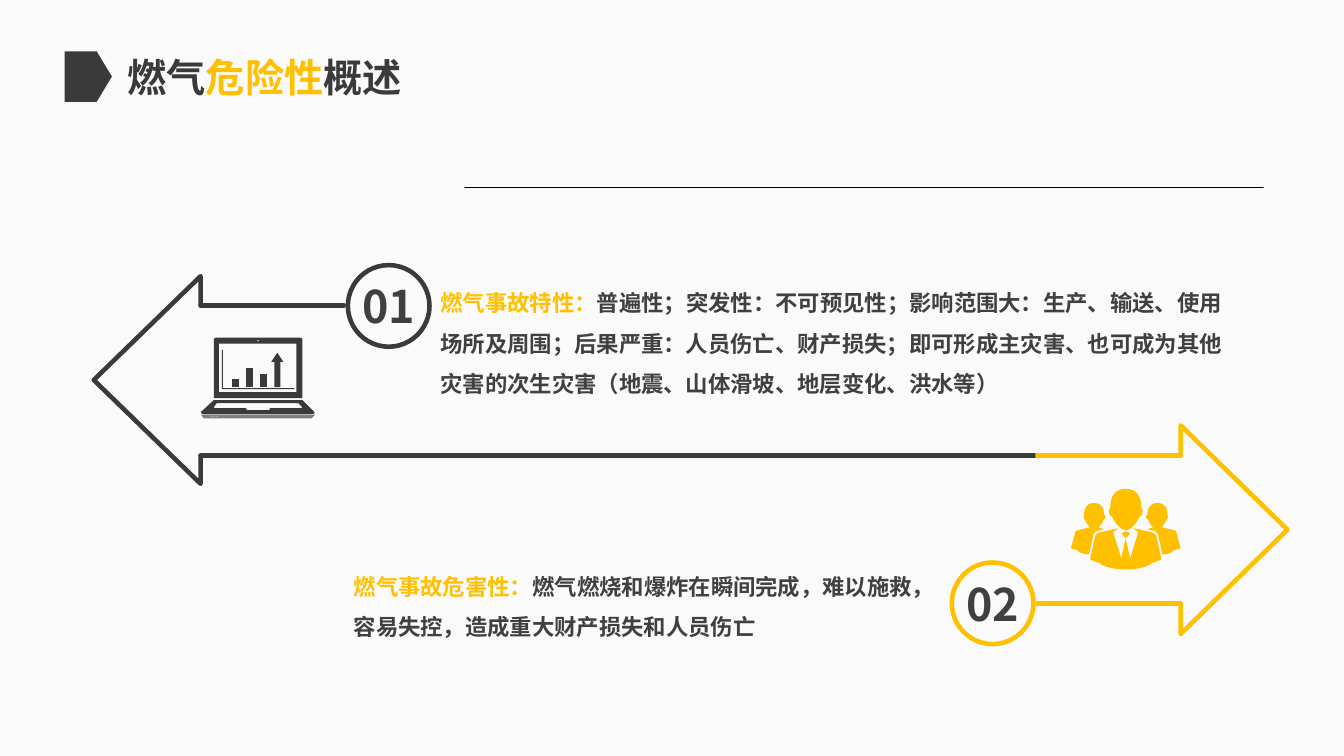
from dataclasses import dataclass

from lxml import etree
from pptx import Presentation
from pptx import util as u
from pptx.dml.color import RGBColor
from pptx.enum import shapes, text
from pptx.oxml.ns import qn

# Grid: square cells of a tenth of an inch
COLS, ROWS = 133.3, 75
CELL = u.Inches(0.1)
FONT = "Noto Sans CJK SC"
DARK, GREY, AMBER, GOLD = "3A3A3A", "404040", "FFC000", "FFC001"
CENTER = text.PP_ALIGN.CENTER
STROKE = 3.25
AXIS = 111.66  # middle column of the people icon


@dataclass
class Arrow:
    base: float
    tip: float
    top: float
    bottom: float
    upper: float
    lower: float
    color: str
    upper_end: float
    lower_end: float


@dataclass
class Badge:
    label: str
    col: float
    row: float
    color: str


@dataclass
class Part:
    contours: list
    alpha: int = 100


ARROWS = [
    Arrow(117.1, 127.7, 42.2, 62.9, 45.2, 59.9, AMBER, 102.9, 102.9),
    Arrow(19.9, 9.3, 27.4, 48, 30.3, 45.2, DARK, 34.1, 34.1),
]
BADGES = [Badge("01", 34.5, 26.3, DARK), Badge("02", 94.4, 55.8, AMBER)]


def cells(n: float) -> int:
    return round(n * CELL)


def rgb(color: str) -> RGBColor:
    return RGBColor.from_string(color)


def box(left: float, top: float, width: float, height: float) -> list:
    return [(left, top), (left + width, top),
            (left + width, top + height), (left, top + height)]


def flatten(outline: list, steps: int = 8) -> list:
    """Turn points and cubic curves (six numbers) into plain points."""
    points = []
    for item in outline:
        if len(item) == 2:
            points.append(item)
            continue
        x0, y0 = points[-1]
        x1, y1, x2, y2, x3, y3 = item
        for i in range(1, steps + 1):
            t = i / steps
            a, b, c, d = (1 - t) ** 3, 3 * t * (1 - t) ** 2, 3 * t * t * (1 - t), t ** 3
            points.append((a * x0 + b * x1 + c * x2 + d * x3,
                           a * y0 + b * y1 + c * y2 + d * y3))
    return points


def mirror(outline: list) -> list:
    return [(2 * AXIS - x, y) for x, y in reversed(flatten(outline))]


def symmetric(half: list) -> list:
    return flatten(half) + mirror(half)


def style_line(sp, color: str, width: float) -> None:
    sp.line.color.rgb = rgb(color)
    sp.line.width = u.Pt(width)
    ln = sp.line._get_or_add_ln()
    ln.set("cap", "rnd")
    etree.SubElement(ln, qn("a:round"))


def add_line(parent, x1: float, y1: float, x2: float, y2: float,
             color: str, width: float = STROKE) -> None:
    sp = parent.add_connector(shapes.MSO_CONNECTOR.STRAIGHT, *map(cells, (x1, y1, x2, y2)))
    style_line(sp, color, width)
    etree.SubElement(sp._element.spPr, qn("a:effectLst"))


def add_outline(parent, contours: list, closed: bool = True):
    builder = None
    for contour in contours:
        points = [(cells(x), cells(y)) for x, y in flatten(contour)]
        if builder is None:
            builder = parent.build_freeform(*points[0], scale=1.0)
        else:
            builder.move_to(*points[0])
        builder.add_line_segments(points[1:], close=closed)
    sp = builder.convert_to_shape()
    sp.shadow.inherit = False
    return sp


def add_icon(parent, parts: list, color: str) -> None:
    group = parent.add_group_shape()
    for part in parts:
        sp = add_outline(group.shapes, part.contours)
        sp.fill.solid()
        sp.fill.fore_color.rgb = rgb(color)
        sp.line.fill.background()
        if part.alpha < 100:
            clr = sp._element.spPr.find(".//" + qn("a:srgbClr"))
            etree.SubElement(clr, qn("a:alpha")).set("val", str(part.alpha * 1000))


def add_arrow(parent, a: Arrow) -> None:
    head = [(a.base, a.upper), (a.base, a.top), (a.tip, (a.top + a.bottom) / 2),
            (a.base, a.bottom), (a.base, a.lower)]
    sp = add_outline(parent, [head], closed=False)
    sp.fill.background()
    style_line(sp, a.color, STROKE)
    add_line(parent, a.upper_end, a.upper, a.base, a.upper, a.color)
    add_line(parent, a.lower_end, a.lower, a.base, a.lower, a.color)


def write(tf, runs: list, size: float, align=None, spacing=None, before=None) -> None:
    p = tf.paragraphs[0]
    p.alignment, p.line_spacing = align, spacing
    if before is not None:
        p.space_before = u.Pt(before)
    for words, color in runs:
        r = p.add_run()
        r.text = words
        r.font.size, r.font.bold, r.font.name = u.Pt(size), True, FONT
        r.font.color.rgb = rgb(color)
        etree.SubElement(r._r.get_or_add_rPr(), qn("a:ea")).set("typeface", FONT)


def add_text(parent, left: float, top: float, width: float, height: float,
             runs: list, size: float, **layout) -> None:
    tf = parent.add_textbox(*map(cells, (left, top, width, height))).text_frame
    tf.word_wrap = True
    tf.auto_size = text.MSO_AUTO_SIZE.SHAPE_TO_FIT_TEXT
    write(tf, runs, size, **layout)


def add_badge(parent, b: Badge) -> None:
    sp = parent.add_shape(shapes.MSO_SHAPE.OVAL, *map(cells, (b.col, b.row, 8.1, 8.1)))
    sp.shadow.inherit = False
    sp.fill.background()
    style_line(sp, b.color, STROKE)
    tf = sp.text_frame
    tf.word_wrap = False
    tf.vertical_anchor = text.MSO_ANCHOR.MIDDLE
    write(tf, [(b.label, GREY)], 32, align=CENTER)


# Laptop icon
SCREEN = [(21.2, 39.5), (21.2, 33.8), (21.2, 33.6, 21.3, 33.5, 21.5, 33.5), (29.7, 33.5),
          (29.9, 33.5, 30, 33.6, 30, 33.8), (30, 39.5)]
CAMERA = [(25.6, 33.7), (25.7, 33.8), (25.6, 33.9), (25.5, 33.8)]
BASE = [(21.2, 39.7), (19.9, 40.9), (20.1, 41.1), (31.1, 41.1), (31.2, 40.9), (30, 39.7)]
KEYS = [(21.5, 40), (29.6, 40), (30, 40.4), (29.9, 40.5), (26.8, 40.5), (26.7, 40.7),
        (24.5, 40.7), (24.4, 40.5), (21.3, 40.5), (21.2, 40.4)]
FOOT = [(19.9, 41.1), (20.1, 41.2), (31.1, 41.2), (31.2, 41.1), (31.2, 41.2),
        (30.9, 41.5), (20.2, 41.5)]
LIGHTS = [box(20.9 + 0.3 * i, 41.3, 0.1, 0.1) for i in range(3)]
BARS = [box(23 + 1.4 * i, top, 0.7, 38.4 - top) for i, top in enumerate((37.6, 36.5, 37.1))]
RISE = [(28.1, 35.9), (27.5, 35), (26.9, 35.9), (27.2, 35.9), (27.2, 38.4),
        (27.8, 38.4), (27.8, 35.9)]
AXES = [(22.1, 38.5), (22.1, 34.7), (22, 34.7), (22, 38.6), (29.2, 38.6), (29.2, 38.5)]
LAPTOP = [Part([SCREEN, box(21.7, 34.1, 7.7, 4.8), CAMERA]), Part([BASE, KEYS]),
          Part([FOOT, *LIGHTS], alpha=64), *[Part([s]) for s in (*BARS, RISE, AXES)]]

# People icon: right halves, mirrored at the axis
SUIT = [(AXIS, 53.4), (112.1, 55.4), (112.9, 52.8), (112.4, 52.4), (114.2, 52.8),
        (114.5, 52.9, 114.7, 53.1, 114.7, 53.2), (115.2, 55.5), (114.2, 55.9),
        (113.9, 56.2, 112.9, 56.5, AXIS, 56.5)]
TIE = [(AXIS, 52.7), (112.1, 52.9), (AXIS, 53.4)]
HEAD = [(AXIS, 48.5), (112.8, 48.5, 113.2, 49.3, 113.2, 50.4),
        (113.3, 50.5, 113.4, 50.6, 113.3, 50.9), (113.3, 51.1, 113.2, 51.2, 113, 51.3),
        (112.7, 52, 112.1, 52.6, AXIS, 52.6)]
COLLEAGUE = [(116.7, 52.9), (116.7, 52.7, 116.5, 52.6, 116.4, 52.6), (115.2, 52.3),
             (115.4, 52.2, 115.5, 51.9, 115.7, 51.6), (115.8, 51.4),
             (115.9, 51.2, 115.8, 51.1, 115.8, 51.1), (115.8, 50.4, 115.5, 49.9, 114.8, 49.9),
             (114.1, 49.9, 113.8, 50.4, 113.8, 51.1), (113.7, 51.1, 113.6, 51.2, 113.7, 51.4),
             (113.9, 51.6), (114, 51.9, 114.2, 52.2, 114.4, 52.3), (113.8, 52.5),
             (114.2, 52.6), (114.7, 52.6, 114.9, 53, 114.9, 53.2), (115.3, 55),
             (115.9, 55, 116.3, 54.8, 116.4, 54.6), (117.1, 54.4)]
PEOPLE = [*[Part([symmetric(half)]) for half in (SUIT, TIE, HEAD)],
          Part([COLLEAGUE, mirror(COLLEAGUE)])]


def main() -> None:
    prs = Presentation()
    prs.slide_width, prs.slide_height = cells(COLS), cells(ROWS)
    s = prs.slides.add_slide(prs.slide_layouts[6])
    s.background.fill.solid()
    s.background.fill.fore_color.rgb = rgb("FAFAFA")
    canvas = s.shapes

    # Title
    sp = canvas.add_shape(shapes.MSO_SHAPE.PENTAGON, *map(cells, (6.4, 5.1, 4.7, 5)))
    sp.adjustments[0] = 0.32
    sp.shadow.inherit = False
    sp.fill.solid()
    sp.fill.fore_color.rgb = rgb(DARK)
    sp.line.fill.background()
    add_text(canvas, 6.4, 4.8, 39.7, 5.7,
             [("燃气", DARK), ("危险性", GOLD), ("概述", DARK)], 28, align=CENTER)

    # Arrows, shared shaft, badges and icons
    add_line(canvas, 34.1, 45.2, 102.6, 45.2, DARK)
    for arrow in ARROWS:
        add_arrow(canvas, arrow)
    for badge in BADGES:
        add_badge(canvas, badge)
    add_icon(canvas, LAPTOP, DARK)
    add_icon(canvas, PEOPLE, AMBER)

    # Descriptions and rule
    add_text(canvas, 42.7, 26.9, 81.2, 13.1, [
        ("燃气事故特性：", GOLD),
        ("普遍性；突发性：不可预见性；影响范围大：生产、输送、使用场所及周围；后果严重：人员伤亡、财产损失；"
         "即可形成主灾害、也可成为其他灾害的次生灾害（地震、山体滑坡、地层变化、洪水等）", GREY),
    ], 16, spacing=1.5, before=3.2)
    add_text(canvas, 34.1, 55, 60, 9.1, [
        ("燃气事故危害性：", GOLD),
        ("燃气燃烧和爆炸在瞬间完成，难以施救，容易失控，造成重大财产损失和人员伤亡", GREY),
    ], 16, spacing=1.5)
    add_line(canvas, 46.1, 18.6, 125.3, 18.6, "000000", 0.5)

    prs.save("out.pptx")


if __name__ == "__main__":
    main()
